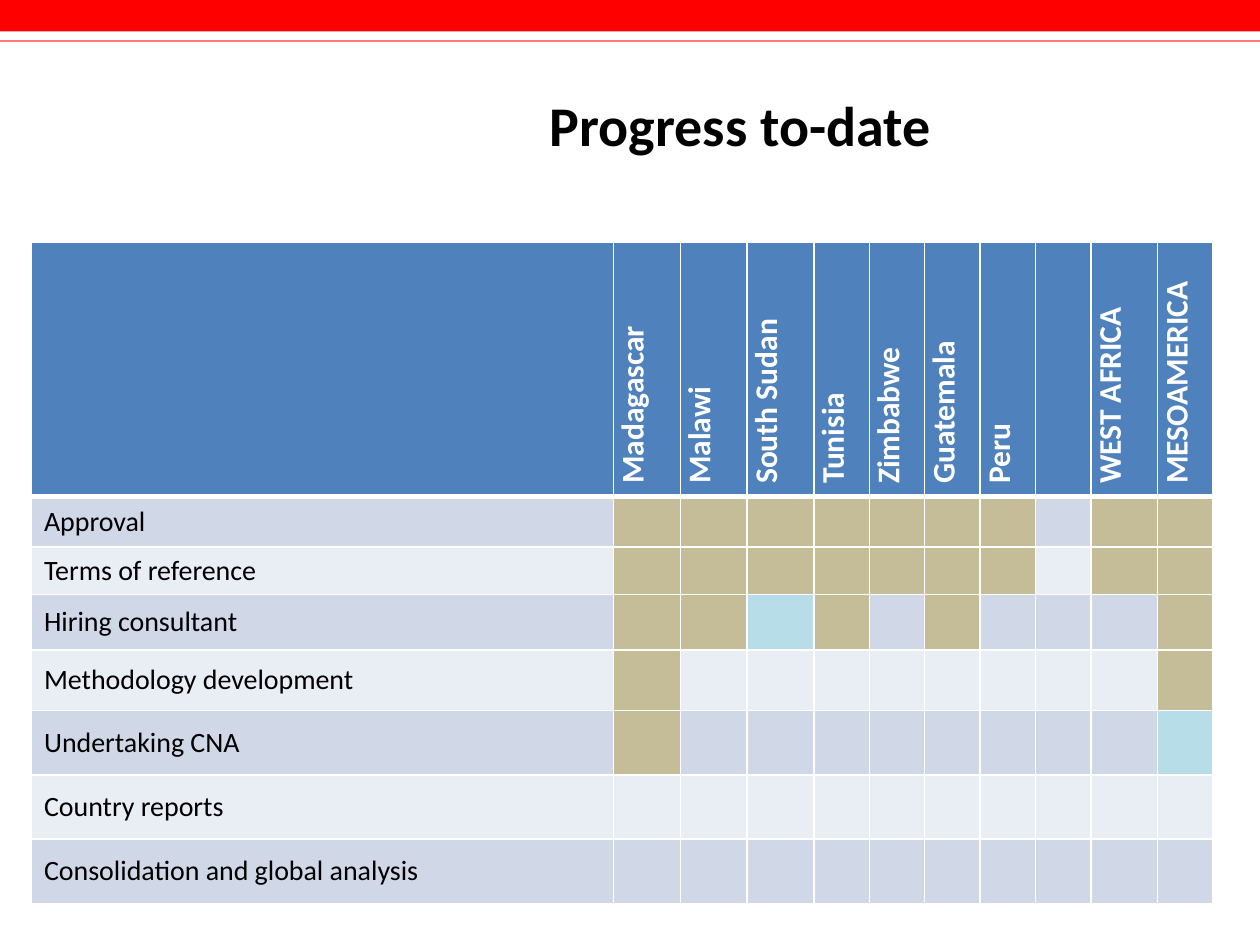
from dataclasses import dataclass

from lxml import etree
from pptx import Presentation
from pptx import util as u
from pptx.dml.color import RGBColor
from pptx.enum import shapes, text
from pptx.oxml.ns import qn


@dataclass(frozen=True)
class Theme:
    font: str = "Calibri"
    title_size: int = 32
    header_size: int = 18
    label_size: int = 16
    ink: str = "000000"
    white: str = "FFFFFF"
    banner: str = "FF0000"
    rule: str = "FF3333"
    header: str = "4F81BD"
    bands: tuple = ("D0D8E8", "E9EDF4")
    done: str = "C4BD97"
    ongoing: str = "B7DEE8"
    thin: int = 1
    thick: int = 3
    indent: float = 0.1


class SlideBuilder:
    def __init__(self, presentation, theme):
        self.theme = theme
        self.width = presentation.slide_width
        self.height = presentation.slide_height
        self.slide = presentation.slides.add_slide(presentation.slide_layouts[5])

    def box(self, left, top, width, height):
        return (round(left * self.width), round(top * self.height),
                round(width * self.width), round(height * self.height))

    def run(self, paragraph, words, size, color, bold):
        run = paragraph.add_run()
        run.text = words
        run.font.name = self.theme.font
        run.font.size = u.Pt(size)
        run.font.bold = bold
        run.font.color.rgb = RGBColor.from_string(color)

    def bar(self, color, *share):
        shape = self.slide.shapes.add_shape(shapes.MSO_SHAPE.RECTANGLE, *self.box(*share))
        shape.shadow.inherit = False
        shape.fill.solid()
        shape.fill.fore_color.rgb = RGBColor.from_string(color)
        shape.line.fill.background()

    def title(self, words, *share):
        title = self.slide.shapes.title
        title.left, title.top, title.width, title.height = self.box(*share)
        frame = title.text_frame
        frame.vertical_anchor = text.MSO_ANCHOR.MIDDLE
        paragraph = frame.paragraphs[0]
        paragraph.alignment = text.PP_ALIGN.CENTER
        self.run(paragraph, words, self.theme.title_size, self.theme.ink, True)

    def border(self, cell, side, weight):
        line = etree.SubElement(cell._tc.get_or_add_tcPr(), qn(f"a:ln{side}"), w=str(u.Pt(weight)))
        fill = etree.SubElement(line, qn("a:solidFill"))
        etree.SubElement(fill, qn("a:srgbClr"), val=self.theme.white)

    def cell(self, cell, color, top, bottom):
        theme = self.theme
        weights = {"L": theme.thin, "R": theme.thin, "T": top, "B": bottom}
        for side, weight in weights.items():
            self.border(cell, side, weight)
        cell.fill.solid()
        cell.fill.fore_color.rgb = RGBColor.from_string(color)
        cell.margin_left = cell.margin_right = cell.margin_top = cell.margin_bottom = 0
        cell.vertical_anchor = text.MSO_ANCHOR.MIDDLE

    def label(self, cell, words, size, color, bold):
        paragraph = cell.text_frame.paragraphs[0]
        paragraph._p.get_or_add_pPr().set("marL", str(u.Inches(self.theme.indent)))
        self.run(paragraph, words, size, color, bold)

    def progress_table(self, countries, stages, column_widths, row_heights, *share):
        theme = self.theme
        frame = self.slide.shapes.add_table(len(row_heights), len(column_widths), *self.box(*share))
        table = frame.table
        for column, width in zip(table.columns, column_widths):
            column.width = u.Inches(width)
        for row, height in zip(table.rows, row_heights):
            row.height = u.Inches(height)

        for index, country in enumerate(["", *countries]):
            cell = table.cell(0, index)
            self.cell(cell, theme.header, theme.thin, theme.thick)
            if country:
                cell._tc.get_or_add_tcPr().set("vert", "vert270")
                self.label(cell, country, theme.header_size, theme.white, True)

        for row, (stage, statuses) in enumerate(stages, 1):
            band = theme.bands[(row - 1) % 2]
            colors = {"D": theme.done, "O": theme.ongoing, "-": band}
            top = theme.thick if row == 1 else theme.thin
            for index, status in enumerate("-" + statuses):
                self.cell(table.cell(row, index), colors[status], top, theme.thin)
            self.label(table.cell(row, 0), stage, theme.label_size, theme.ink, False)


COUNTRIES = ["Madagascar", "Malawi", "South Sudan", "Tunisia", "Zimbabwe",
             "Guatemala", "Peru", "", "WEST AFRICA", "MESOAMERICA"]
STAGES = [
    ("Approval", "DDDDDDD-DD"),
    ("Terms of reference", "DDDDDDD-DD"),
    ("Hiring consultant", "DDOD-D---D"),
    ("Methodology development", "D--------D"),
    ("Undertaking CNA", "D--------O"),
    ("Country reports", "-" * 10),
    ("Consolidation and global analysis", "-" * 10),
]
WIDE, NARROW = 0.53, 0.44
COLUMN_WIDTHS = [4.62] + [WIDE] * 3 + [NARROW] * 5 + [WIDE, NARROW]
ROW_HEIGHTS = [2.02, 0.4, 0.38, 0.44, 0.48] + [0.51] * 3


def main():
    presentation = Presentation()
    presentation.slide_width = u.Inches(10)
    presentation.slide_height = u.Inches(7.5)
    theme = Theme()
    builder = SlideBuilder(presentation, theme)
    builder.bar(theme.banner, 0, 0, 1, 0.25 / 7.5)
    builder.bar(theme.rule, 0, 0.32 / 7.5, 1, 0.01 / 7.5)
    builder.title("Progress to-date", 0.175, 0.5 / 7.5, 0.825, 0.97 / 7.5)
    builder.progress_table(COUNTRIES, STAGES, COLUMN_WIDTHS, ROW_HEIGHTS,
                           0.025, 1.92 / 7.5, 0.942, 0.7)
    presentation.save("out.pptx")


if __name__ == "__main__":
    main()
